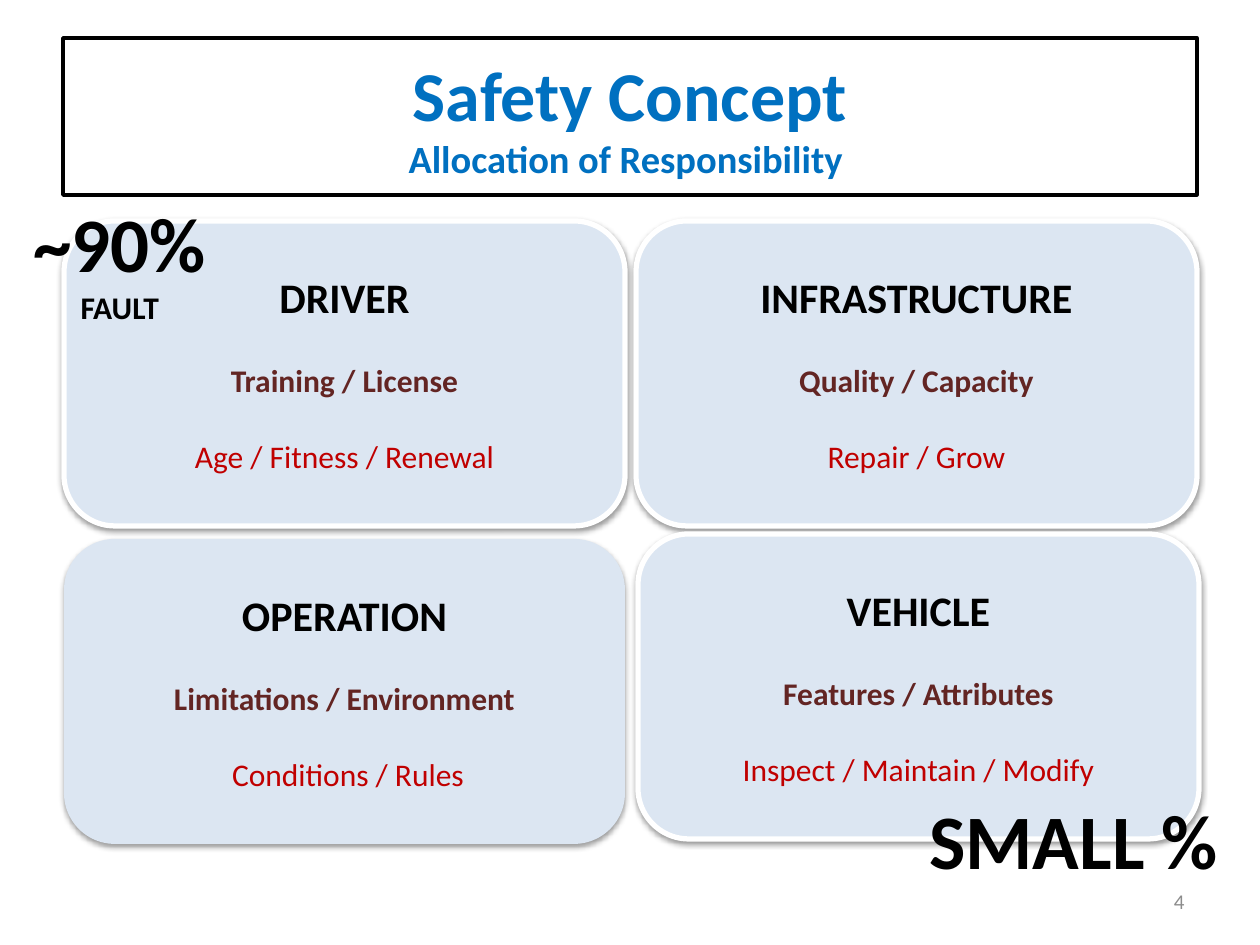
from lxml import etree
from pptx import Presentation
from pptx.dml.color import RGBColor
from pptx.enum.shapes import MSO_SHAPE
from pptx.enum.text import MSO_ANCHOR, PP_ALIGN
from pptx.oxml.ns import qn
from pptx.util import Emu, Pt

RECT, ROUNDED = MSO_SHAPE.RECTANGLE, MSO_SHAPE.ROUNDED_RECTANGLE
LEFT, CENTER, RIGHT = PP_ALIGN.LEFT, PP_ALIGN.CENTER, PP_ALIGN.RIGHT
TOP, MIDDLE, BOTTOM = MSO_ANCHOR.TOP, MSO_ANCHOR.MIDDLE, MSO_ANCHOR.BOTTOM

EMU_PER_PX = 914400 // 126
FONT = "Calibri"
WHITE, BLACK, BLUE, PALE = "FFFFFF", "000000", "0070C0", "DCE6F2"
MAROON, RED, GRAY = "632523", "C00000", "8C8C8C"

# Text styles: size, colour, bold, alignment, space before in points
STYLES = {
    "title": (40, BLUE, True, CENTER, 0),
    "subtitle": (22, BLUE, True, CENTER, 0),
    "area": (24, BLACK, True, CENTER, 0),
    "aspect": (18, MAROON, True, CENTER, 22),
    "detail": (18, RED, False, CENTER, 22),
    "share": (44, BLACK, True, LEFT, 0),
    "share label": (18, BLACK, True, CENTER, 0),
    "page": (12, GRAY, False, RIGHT, 0),
}

TITLE = [("Safety Concept", "title"), ("Allocation of Responsibility ", "subtitle")]

# Left, top, outline colour, area, aspect, detail
CARD_SIZE = (561, 305)
CARDS = [
    (636, 221, WHITE, "INFRASTRUCTURE", "Quality / Capacity", "Repair / Grow"),
    (64, 221, WHITE, "DRIVER", "Training / License", "Age / Fitness / Renewal"),
    (64, 539, None, "OPERATION", "Limitations / Environment", " Conditions / Rules"),
    (638, 534, WHITE, "VEHICLE", "Features / Attributes", "Inspect / Maintain / Modify"),
]

# Box, anchor, wrap, lines
LABELS = [
    ((21, 189, 253, 149), TOP, False, [("~90%", "share"), ("FAULT", "share label")]),
    ((917, 692, 343, 199), BOTTOM, True, [("SMALL %", "share")]),
    ((903, 876, 294, 50), MIDDLE, True, [("4", "page")]),
]


def px(*lengths):
    return [Emu(length * EMU_PER_PX) for length in lengths]


def rgb(color):
    return RGBColor.from_string(color)


def write(frame, lines, anchor=MIDDLE, wrap=True):
    frame.word_wrap = wrap
    frame.vertical_anchor = anchor
    for index, (words, style) in enumerate(lines):
        size, color, bold, align, before = STYLES[style]
        paragraph = frame.paragraphs[0] if index == 0 else frame.add_paragraph()
        paragraph.alignment = align
        paragraph.space_before = Pt(before)
        run = paragraph.add_run()
        run.text = words
        run.font.color.rgb = rgb(color)
        font_format = {"name": FONT, "size": Pt(size), "bold": bold}
        for name, value in font_format.items():
            setattr(run.font, name, value)


def add_panel(slide, kind, box, fill, outline, width, lines):
    panel = slide.shapes.add_shape(kind, *px(*box))
    panel.shadow.inherit = False
    panel.fill.solid()
    panel.fill.fore_color.rgb = rgb(fill)
    if outline:
        panel.line.color.rgb = rgb(outline)
        panel.line.width = Pt(width)
    else:
        panel.line.fill.background()
    write(panel.text_frame, lines)
    return panel


def add_shadow(panel):
    """Give the panel a soft shadow straight below it."""
    effects = panel._element.spPr.find(qn("a:effectLst"))
    shadow = etree.SubElement(
        effects, qn("a:outerShdw"), blurRad=str(Pt(3.1)), dist=str(Pt(1.6)),
        dir="5400000", rotWithShape="0")
    color = etree.SubElement(shadow, qn("a:srgbClr"), val=BLACK)
    etree.SubElement(color, qn("a:alpha"), val="38000")


def main():
    deck = Presentation()
    deck.slide_width, deck.slide_height = px(1260, 945)
    slide = deck.slides.add_slide(deck.slide_layouts[6])

    add_panel(slide, RECT, (63, 38, 1134, 157), WHITE, BLACK, 2, TITLE)
    for left, top, outline, *texts in CARDS:
        lines = list(zip(texts, ("area", "aspect", "detail")))
        card = add_panel(slide, ROUNDED, (left, top, *CARD_SIZE), PALE, outline, 3, lines)
        add_shadow(card)
    for box, anchor, wrap, lines in LABELS:
        label = slide.shapes.add_textbox(*px(*box))
        write(label.text_frame, lines, anchor, wrap)

    deck.save("out.pptx")


if __name__ == "__main__":
    main()
